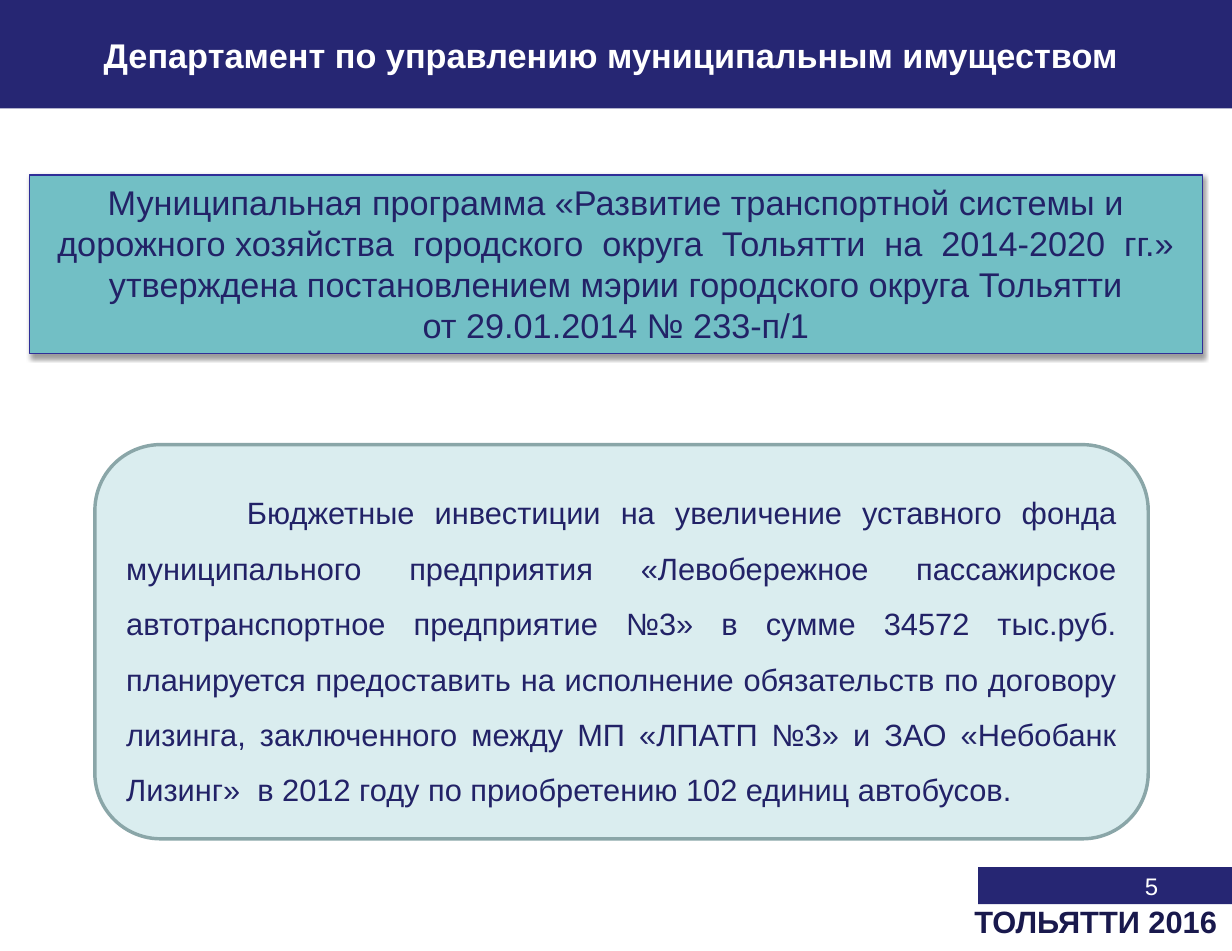
import pptx
import pptx.dml.color
import pptx.enum.shapes
import pptx.enum.text
import pptx.oxml
import pptx.util
from dataclasses import dataclass

PX = 9144  # EMU in one px, 100 px to the inch
SHAPES = pptx.enum.shapes.MSO_SHAPE
ALIGN = pptx.enum.text.PP_ALIGN
ANCHOR = pptx.enum.text.MSO_ANCHOR


@dataclass(frozen=True)
class Theme:
    font: str = "Arial"
    navy: str = "262673"
    ink: str = "222267"
    dark_ink: str = "19194D"
    white: str = "FFFFFF"
    teal: str = "72BFC5"
    teal_edge: str = "2F2F98"
    pale: str = "DAEDEF"
    pale_edge: str = "8AA6A8"
    heading_size: int = 20
    body_size: int = 18
    number_size: int = 14


THEME = Theme()

SOFT_SHADOW = (
    '<a:effectLst xmlns:a="http://schemas.openxmlformats.org/drawingml/2006/main">'
    '<a:outerShdw blurRad="39370" dist="20320" dir="5400000" rotWithShape="0">'
    '<a:srgbClr val="000000"><a:alpha val="38000"/></a:srgbClr>'
    '</a:outerShdw></a:effectLst>'
)


def rgb(color):
    return pptx.dml.color.RGBColor.from_string(color)


def emu(*lengths):
    return [pptx.util.Emu(length * PX) for length in lengths]


def add_panel(slide, box, fill, kind=SHAPES.RECTANGLE, edge=None, edge_width=1):
    panel = slide.shapes.add_shape(kind, *emu(*box))
    panel.shadow.inherit = False
    panel.fill.solid()
    panel.fill.fore_color.rgb = rgb(fill)
    if edge:
        panel.line.color.rgb = rgb(edge)
        panel.line.width = pptx.util.Pt(edge_width)
    else:
        panel.line.fill.background()
    return panel


def write(holder, lines, size, color, align, bold=False, spacing=1.0,
          anchor=ANCHOR.TOP, margins=(10, 5, 10, 5), indent=0):
    frame = holder.text_frame
    frame.word_wrap = True
    frame.vertical_anchor = anchor
    (frame.margin_left, frame.margin_top,
     frame.margin_right, frame.margin_bottom) = emu(*margins)
    for index, line in enumerate(lines):
        paragraph = frame.add_paragraph() if index else frame.paragraphs[0]
        paragraph.alignment = align
        paragraph.line_spacing = spacing
        if indent:
            paragraph._p.get_or_add_pPr().set("indent", str(indent * PX))
        run = paragraph.add_run()
        run.text = line
        run.font.name = THEME.font
        run.font.size = pptx.util.Pt(size)
        run.font.bold = bold
        run.font.color.rgb = rgb(color)


def add_header(slide, box):
    band = add_panel(slide, box, THEME.navy)
    write(band, ["Департамент по управлению муниципальным имуществом"],
          THEME.heading_size, THEME.white, ALIGN.CENTER, bold=True, spacing=0.8,
          anchor=ANCHOR.MIDDLE, margins=(10, 12, 18, 5))


def add_program(slide, box):
    program = add_panel(slide, box, THEME.teal, edge=THEME.teal_edge, edge_width=0.75)
    properties = program._element.spPr
    properties.remove(properties.find(pptx.oxml.ns.qn("a:effectLst")))
    properties.append(pptx.oxml.parse_xml(SOFT_SHADOW))
    write(program,
          ["Муниципальная программа «Развитие транспортной системы и дорожного "
           "хозяйства  городского  округа  Тольятти  на  2014-2020  гг.» "
           "утверждена постановлением мэрии городского округа Тольятти",
           "от 29.01.2014 № 233-п/1"],
          THEME.heading_size, THEME.ink, ALIGN.CENTER)


def add_investment(slide, box):
    investment = add_panel(slide, box, THEME.pale, SHAPES.ROUNDED_RECTANGLE,
                           THEME.pale_edge, 2)
    write(investment,
          ["Бюджетные инвестиции на увеличение уставного фонда муниципального "
           "предприятия «Левобережное пассажирское автотранспортное предприятие №3» "
           "в сумме 34572 тыс.руб. планируется предоставить на исполнение "
           "обязательств по договору лизинга, заключенного между МП «ЛПАТП №3» "
           "и ЗАО «Небобанк Лизинг»  в 2012 году по приобретению 102 единиц "
           "автобусов."],
          THEME.body_size, THEME.ink, ALIGN.JUSTIFY, spacing=1.5,
          anchor=ANCHOR.MIDDLE, indent=98)


def add_footer(slide, box):
    left, top, width, height = box
    # Page number on its bar
    add_panel(slide, (left + 13, top + 1, width - 13, 30), THEME.navy)
    number = slide.shapes.add_textbox(*emu(left - 64, top, 233, 54))
    write(number, ["5"], THEME.number_size, THEME.white, ALIGN.RIGHT)
    # City and year
    city = slide.shapes.add_textbox(*emu(left, top + 31, width + 2, height - 31))
    write(city, ["ТОЛЬЯТТИ 2016"], THEME.body_size, THEME.dark_ink, ALIGN.LEFT,
          bold=True, spacing=0.8)


def main():
    deck = pptx.Presentation()
    deck.slide_width, deck.slide_height = emu(1000, 772)
    slide = deck.slides.add_slide(deck.slide_layouts[6])
    add_footer(slide, (781, 703, 219, 66))
    add_header(slide, (0, 0, 1000, 88))
    add_program(slide, (24, 142, 952, 145))
    add_investment(slide, (77, 361, 855, 320))
    deck.save("out.pptx")


if __name__ == "__main__":
    main()
